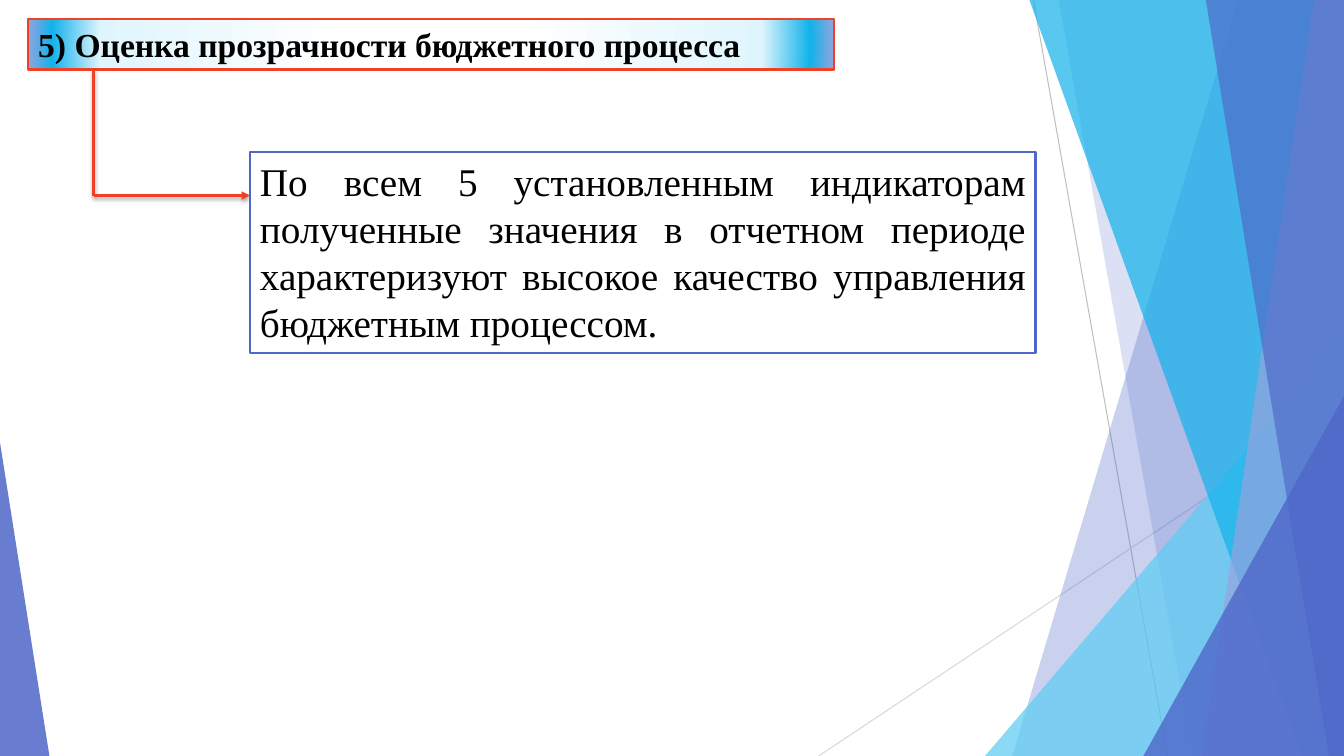
import dataclasses

import lxml.etree
import pptx
import pptx.dml.color
import pptx.enum.shapes
import pptx.enum.text
import pptx.oxml
import pptx.oxml.ns
import pptx.util

Inches = pptx.util.Inches
Pt = pptx.util.Pt
qn = pptx.oxml.ns.qn
SHAPE = pptx.enum.shapes.MSO_SHAPE
ALIGN = pptx.enum.text.PP_ALIGN

SLIDE_W, SLIDE_H = 13.33, 7.5


@dataclasses.dataclass(frozen=True)
class Theme:
    font: str = "Times New Roman"
    heading_size: int = 24
    body_size: int = 28
    text: str = "000000"
    paper: str = "FFFFFF"
    indigo: str = "4E67C8"
    lavender: str = "95A4DE"
    sky: str = "5ECCF3"
    azure: str = "12B2EB"
    ice: str = "DFF5FD"
    accent: str = "F14124"
    rule_dark: str = "BFBFBF"
    rule_light: str = "D9D9D9"


THEME = Theme()


def rgb(color):
    return pptx.dml.color.RGBColor.from_string(color)


def fill_translucent(shape, color, opacity):
    """Fill without outline; opacity in percent."""
    shape.shadow.inherit = False
    shape.fill.solid()
    shape.fill.fore_color.rgb = rgb(color)
    shape.line.fill.background()
    tone = shape._element.spPr.find(".//" + qn("a:srgbClr"))
    lxml.etree.SubElement(tone, qn("a:alpha"), val=str(opacity * 1000))


def fill_radial(shape, stops):
    """Gradient from the centre outwards; stops are (percent, colour)."""
    shape.fill.gradient()
    gradient = shape._element.spPr.find(qn("a:gradFill"))
    for child in list(gradient):
        gradient.remove(child)
    stop_list = lxml.etree.SubElement(gradient, qn("a:gsLst"))
    for percent, color in stops:
        stop = lxml.etree.SubElement(stop_list, qn("a:gs"), pos=str(percent * 1000))
        lxml.etree.SubElement(stop, qn("a:srgbClr"), val=color)
    circle = lxml.etree.SubElement(gradient, qn("a:path"))
    circle.set("path", "circle")
    lxml.etree.SubElement(circle, qn("a:fillToRect"),
                          l="50000", t="50000", r="50000", b="50000")


def add_line(slide, start, end, color, width, arrow=False, shadow=False):
    line = slide.shapes.add_connector(
        pptx.enum.shapes.MSO_CONNECTOR.STRAIGHT,
        *(Inches(value) for value in (*start, *end)))
    line.line.color.rgb = rgb(color)
    line.line.width = Pt(width)
    properties = line._element.spPr
    if arrow:
        lxml.etree.SubElement(properties.find(qn("a:ln")), qn("a:tailEnd"),
                              type="triangle")
    effects = lxml.etree.SubElement(properties, qn("a:effectLst"))
    if shadow:
        outer = lxml.etree.SubElement(
            effects, qn("a:outerShdw"), blurRad=str(Pt(3)), dist=str(Pt(2)),
            dir="5400000", rotWithShape="0")
        tone = lxml.etree.SubElement(outer, qn("a:srgbClr"), val=THEME.text)
        lxml.etree.SubElement(tone, qn("a:alpha"), val="35000")


def add_band(slide, top_x, bottom_x, color, opacity):
    """Full-height band between a slanted edge and the right slide edge."""
    builder = slide.shapes.build_freeform(Inches(top_x), 0)
    corners = [(SLIDE_W, 0), (SLIDE_W, SLIDE_H), (bottom_x, SLIDE_H)]
    builder.add_line_segments([(Inches(x), Inches(y)) for x, y in corners])
    fill_translucent(builder.convert_to_shape(), color, opacity)


def add_corner(slide, left, top, width, apex, color, opacity):
    """Right triangle standing on the bottom edge; apex 0 left, 1 right."""
    corner = slide.shapes.add_shape(
        SHAPE.ISOSCELES_TRIANGLE, Inches(left), Inches(top),
        Inches(width), Inches(SLIDE_H - top))
    corner.adjustments[0] = apex
    fill_translucent(corner, color, opacity)


def add_backdrop(slide):
    # Thin rules
    add_line(slide, (10.25, 0), (11.58, SLIDE_H), THEME.rule_dark, 0.75)
    add_line(slide, (SLIDE_W, 4.03), (8.12, SLIDE_H), THEME.rule_light, 0.75)
    # Overlapping facets, back to front
    add_band(slide, 12.28, 10.04, THEME.indigo, 30)
    add_band(slide, 10.5, 11.83, THEME.indigo, 20)
    add_corner(slide, 9.77, 3.33, 3.56, 1, THEME.sky, 72)
    add_band(slide, 10.21, 12.91, THEME.azure, 70)
    add_band(slide, 13.03, 11.92, THEME.lavender, 70)
    add_band(slide, 11.96, 13.18, THEME.indigo, 65)
    add_corner(slide, 11.34, 3.93, 1.99, 1, THEME.indigo, 80)
    add_corner(slide, 0, 4.39, 0.49, 0, THEME.indigo, 85)


def add_text_panel(slide, box, wording, size, outline, align, bold=False):
    panel = slide.shapes.add_shape(SHAPE.RECTANGLE, *(Inches(v) for v in box))
    panel.shadow.inherit = False
    panel.fill.solid()
    panel.fill.fore_color.rgb = rgb(THEME.paper)
    panel.line.color.rgb = rgb(outline)
    panel.line.width = Pt(1.5)
    frame = panel.text_frame
    frame.word_wrap = True
    frame.auto_size = pptx.enum.text.MSO_AUTO_SIZE.SHAPE_TO_FIT_TEXT
    frame.vertical_anchor = pptx.enum.text.MSO_ANCHOR.TOP
    paragraph = frame.paragraphs[0]
    paragraph.text = wording
    paragraph.alignment = align
    paragraph.font.name = THEME.font
    paragraph.font.size = Pt(size)
    paragraph.font.bold = bold
    paragraph.font.color.rgb = rgb(THEME.text)
    return panel


def add_finding(slide, heading_box, conclusion_box):
    # Heading bar
    heading = add_text_panel(
        slide, heading_box, "5) Оценка прозрачности бюджетного процесса",
        THEME.heading_size, THEME.accent, ALIGN.LEFT, bold=True)
    fill_radial(heading, [(24, THEME.paper), (82, THEME.ice),
                          (94, THEME.azure), (100, THEME.lavender)])
    # Elbow from the heading to the conclusion
    left, top, _, height = heading_box
    stem_x = left + 0.65
    elbow = (stem_x, conclusion_box[1] + 0.43)
    arrow_end = (conclusion_box[0], elbow[1])
    add_line(slide, (stem_x, top + height), elbow, THEME.accent, 2, shadow=True)
    add_line(slide, elbow, arrow_end, THEME.accent, 2, arrow=True, shadow=True)
    # Conclusion
    add_text_panel(
        slide, conclusion_box,
        "По всем 5 установленным индикаторам полученные значения в отчетном "
        "периоде характеризуют высокое качество управления бюджетным процессом.",
        THEME.body_size, THEME.indigo, ALIGN.JUSTIFY)


def main():
    deck = pptx.Presentation()
    deck.slide_width, deck.slide_height = Inches(SLIDE_W), Inches(SLIDE_H)
    slide = deck.slides.add_slide(deck.slide_layouts[6])
    add_backdrop(slide)
    add_finding(slide, (0.28, 0.19, 7.99, 0.5), (2.48, 1.51, 7.79, 1.99))
    deck.save("out.pptx")


if __name__ == "__main__":
    main()
